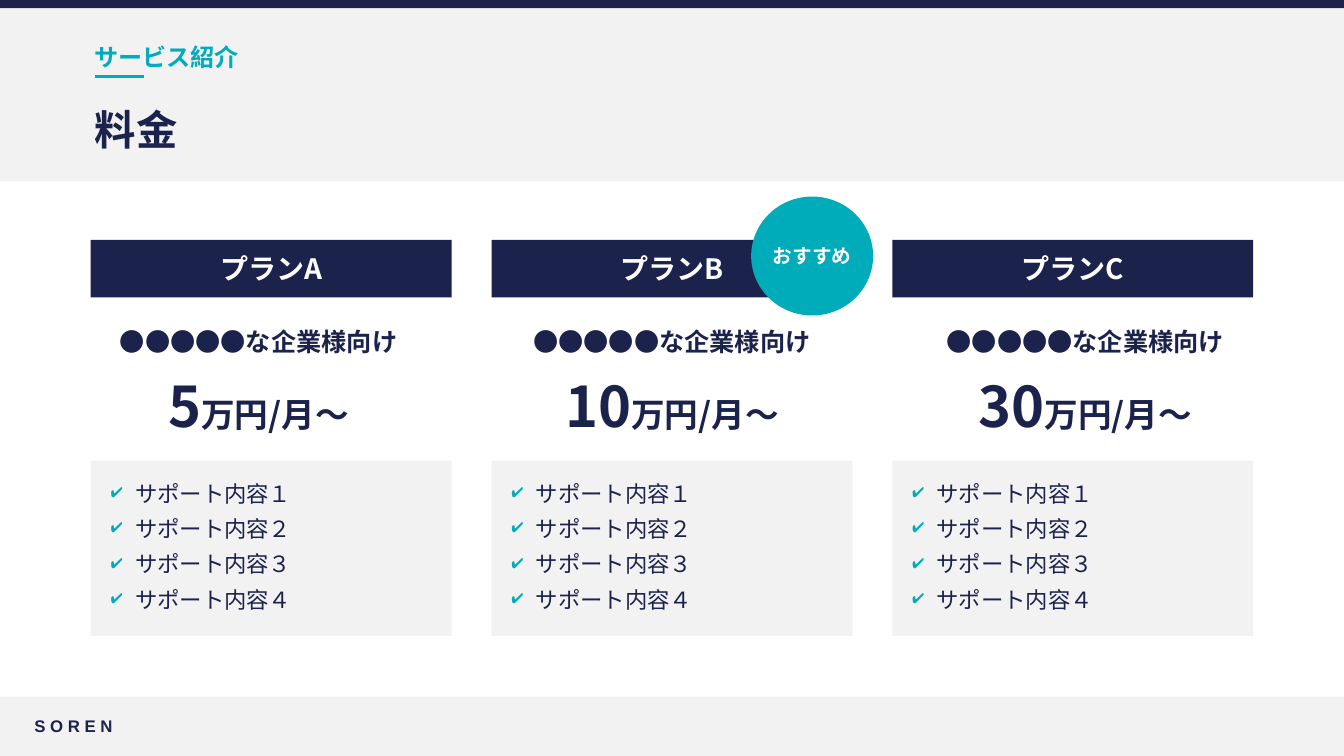
from lxml.etree import SubElement
from pptx import Presentation
from pptx.dml.color import RGBColor
from pptx.enum.shapes import MSO_CONNECTOR, MSO_SHAPE
from pptx.enum.text import MSO_ANCHOR as ANCHOR, MSO_AUTO_SIZE, PP_ALIGN as ALIGN
from pptx.oxml.ns import qn
from pptx.util import Inches, Pt

WIDTH, HEIGHT = 13.33, 7.5
MARGIN, COLUMN_PITCH, COLUMN_WIDTH = 0.9, 3.975, 3.58
CAPTION_SHIFT, CAPTION_WIDTH = 0.125, 3.33
NAVY, TEAL, GREY, WHITE = "1B224C", "00ACBA", "F2F2F2", "FFFFFF"
JAPANESE = "Noto Sans CJK JP"
PLANS = [("プランA", "5"), ("プランB", "10"), ("プランC", "30")]
AUDIENCE = "●●●●●な企業様向け"
PRICE_UNIT = "万円/月〜"
SUPPORT = [" サポート内容１", " サポート内容２", " サポート内容３", " サポート内容４"]


def color(hex_string):
    """Turn a hex string into a colour."""
    return RGBColor.from_string(hex_string)


def style(paragraph, size, ink=NAVY, bold=True, align=ALIGN.LEFT, face=JAPANESE):
    """Set the font and alignment of a whole paragraph."""
    paragraph.alignment = align
    font = paragraph.font
    font.size, font.bold, font.name = Pt(size), bold, face
    font.color.rgb = color(ink)
    defaults = paragraph._p.pPr.find(qn("a:defRPr"))
    SubElement(defaults, qn("a:ea")).set("typeface", face)


def set_frame(frame, insets=(0.04,) * 4, anchor=ANCHOR.TOP, wrap=True):
    """Set insets, anchor and wrapping of a text frame."""
    frame.auto_size = MSO_AUTO_SIZE.NONE
    frame.word_wrap, frame.vertical_anchor = wrap, anchor
    (frame.margin_left, frame.margin_top,
     frame.margin_right, frame.margin_bottom) = map(Inches, insets)


def add_panel(slide, box, fill, preset=MSO_SHAPE.RECTANGLE):
    """Add a filled shape without outline or shadow."""
    panel = slide.shapes.add_shape(preset, *map(Inches, box))
    panel.shadow.inherit = False
    panel.fill.solid()
    panel.fill.fore_color.rgb = color(fill)
    panel.line.fill.background()
    return panel


def add_label(slide, box, text, size, anchor=ANCHOR.TOP, wrap=True, **look):
    """Add a one-paragraph text box and return its paragraph."""
    frame = slide.shapes.add_textbox(*map(Inches, box)).text_frame
    set_frame(frame, anchor=anchor, wrap=wrap)
    label = frame.paragraphs[0]
    label.text = text
    style(label, size, **look)
    return label


def add_header(slide, left, top, width, height):
    """Draw the top band with section name, underline and title."""
    add_panel(slide, (left, top, width, height), GREY)
    add_panel(slide, (left, top, width, 0.08), NAVY)
    text_left, text_width = left + MARGIN, width - 2 * MARGIN
    section = add_label(slide, (text_left, top + 0.41, text_width, 0.28),
                        "サービス紹介", 17.2, ink=TEAL)
    section.line_spacing = 0.9
    underline = slide.shapes.add_connector(
        MSO_CONNECTOR.STRAIGHT,
        *map(Inches, (left + 0.94, top + 0.76, left + 1.43, top + 0.76)))
    underline.line.color.rgb = color(TEAL)
    underline.line.width = Pt(2.5)
    SubElement(underline.element.spPr, qn("a:effectLst"))
    title = slide.shapes.title
    title.left, title.top, title.width, title.height = map(
        Inches, (text_left, top + 0.98, text_width, 0.59))
    title.text = "料金"
    set_frame(title.text_frame, anchor=ANCHOR.MIDDLE)
    style(title.text_frame.paragraphs[0], 29.5)
    title.element.getparent().append(title.element)


def add_check(paragraph):
    """Give a paragraph a teal check mark as its bullet."""
    properties = paragraph._p.get_or_add_pPr()
    properties.set("marL", str(Inches(0.19)))
    properties.set("indent", str(-Inches(0.19)))
    defaults = properties.find(qn("a:defRPr"))
    properties.remove(defaults)
    tint = SubElement(properties, qn("a:buClr"))
    SubElement(tint, qn("a:srgbClr")).set("val", TEAL)
    SubElement(properties, qn("a:buSzPct")).set("val", "80000")
    SubElement(properties, qn("a:buChar")).set("char", "✔")
    properties.append(defaults)


def add_support(slide, box):
    """Draw the grey panel listing the support items."""
    frame = add_panel(slide, box, GREY).text_frame
    set_frame(frame, (0.2, 0.12, 0.12, 0.16), ANCHOR.MIDDLE)
    frame.text = "\n".join(SUPPORT)
    for item in frame.paragraphs:
        item.space_before = item.space_after = Pt(3)
        style(item, 16, bold=False)
        add_check(item)


def add_plan(slide, left, top, width, caption_left, name, amount):
    """Draw one plan column: name, audience, price and support."""
    heading = add_panel(slide, (left, top, width, 0.57), NAVY).text_frame
    set_frame(heading, (0.1, 0.05, 0.1, 0.05), ANCHOR.MIDDLE)
    heading.text = name
    style(heading.paragraphs[0], 20, ink=WHITE, align=ALIGN.CENTER)
    add_label(slide, (caption_left, top + 0.82, CAPTION_WIDTH, 0.38),
              AUDIENCE, 18, align=ALIGN.CENTER)
    price = add_label(slide, (caption_left, top + 1.27, CAPTION_WIDTH, 0.75),
                      amount, 24, align=ALIGN.CENTER)
    price.runs[0].font.size = Pt(40)
    price.add_run().text = PRICE_UNIT
    add_support(slide, (left, top + 2.19, width, 1.74))


def add_badge(slide, box):
    """Draw the round recommendation badge."""
    frame = add_panel(slide, box, TEAL, MSO_SHAPE.OVAL).text_frame
    set_frame(frame, (0,) * 4, ANCHOR.MIDDLE)
    frame.text = "おすすめ"
    style(frame.paragraphs[0], 14, ink=WHITE, align=ALIGN.CENTER)


def add_footer(slide, left, top, width, height):
    """Draw the bottom band with the company name."""
    add_panel(slide, (left, top, width, height), GREY)
    add_label(slide, (left + 0.3, top + 0.14, 1.07, 0.31), "S O R E N", 12,
              anchor=ANCHOR.MIDDLE, wrap=False, face="Arial")


def main():
    """Build the pricing slide and save it."""
    deck = Presentation()
    deck.slide_width, deck.slide_height = Inches(WIDTH), Inches(HEIGHT)
    slide = deck.slides.add_slide(deck.slide_layouts[5])
    add_header(slide, 0, 0, WIDTH, 1.8)
    for column, (name, amount) in enumerate(PLANS):
        left = MARGIN + column * COLUMN_PITCH
        add_plan(slide, left, 2.38, COLUMN_WIDTH,
                 left + column * CAPTION_SHIFT, name, amount)
    add_badge(slide, (7.45, 1.95, 1.21, 1.18))
    add_footer(slide, 0, 6.91, WIDTH, HEIGHT - 6.91)
    deck.save("out.pptx")


if __name__ == "__main__":
    main()
